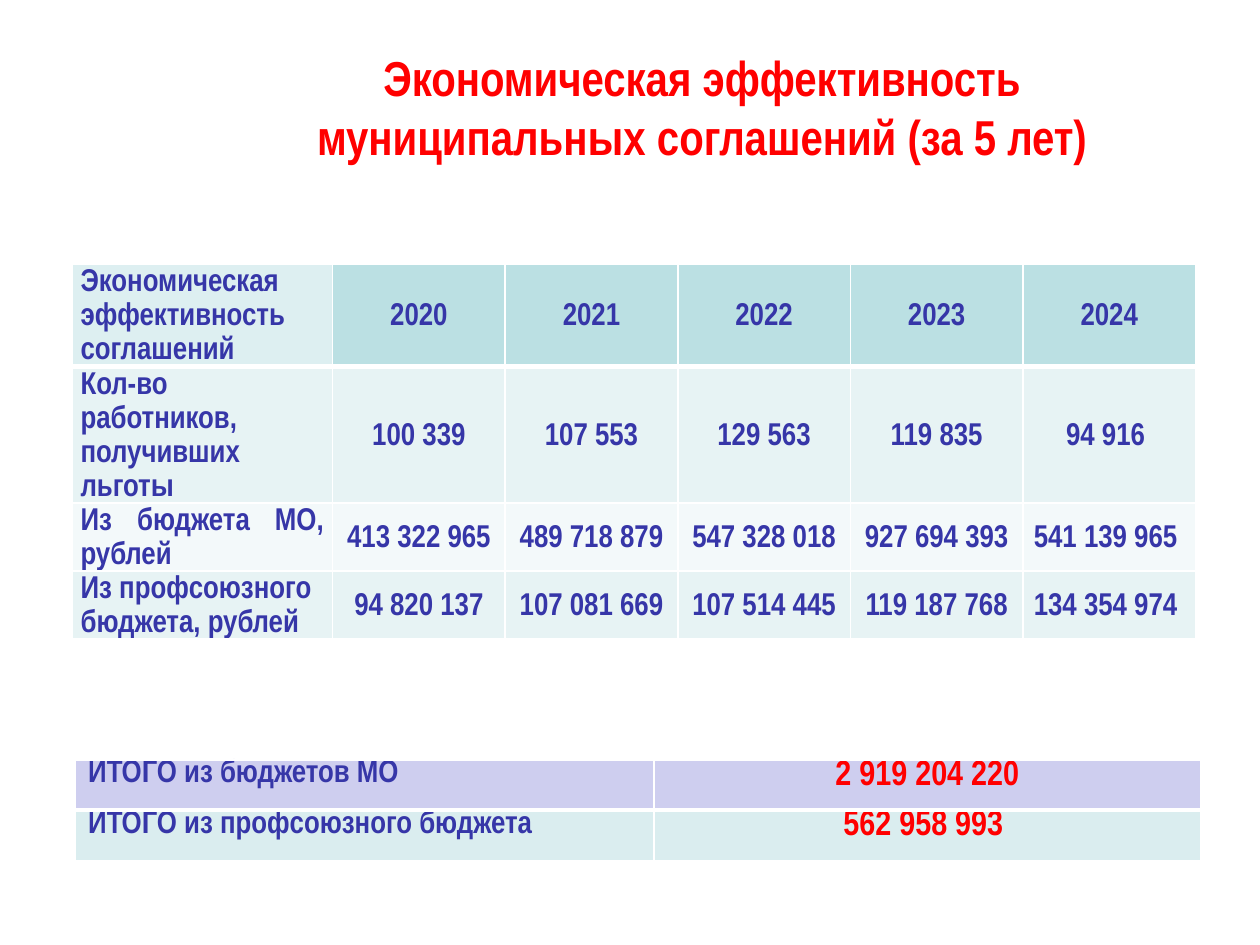
import pptx
import pptx.util
import pptx.dml.color
import pptx.enum.text
from lxml import etree
from pptx.util import Inches, Pt

FONT = "Arial Narrow"
RED, BLUE, WHITE, TEAL = "FF0000", "3636A8", "FFFFFF", "BBE0E3"
ALIGN = pptx.enum.text.PP_ALIGN
ANCHOR = pptx.enum.text.MSO_ANCHOR
NS = "http://schemas.openxmlformats.org/drawingml/2006/main"

YEARS_TABLE = [
    ["Экономическая эффективность соглашений", "2020", "2021", "2022", "2023", "2024"],
    ["Кол-во работников, получивших льготы",
     "100 339", "107 553", "129 563", "119 835", "94 916 "],
    ["Из бюджета МО, рублей",
     "413 322 965", "489 718 879", "547 328 018", "927 694 393", "541 139 965 "],
    ["Из профсоюзного бюджета, рублей",
     "94 820 137", "107 081 669", "107 514 445", "119 187 768", "134 354 974 "],
]
TOTALS = [
    ["ИТОГО из бюджетов МО", "2 919 204 220"],
    ["ИТОГО из профсоюзного бюджета", "562 958 993 "],
]


def rgb(value):
    return pptx.dml.color.RGBColor.from_string(value)


def format_text(p, size, color, align):
    p.alignment = align
    for r in p.runs:
        r.font.name, r.font.size, r.font.bold = FONT, Pt(size), True
        r.font.color.rgb = rgb(color)


def set_borders(cell, bottom):
    """White cell borders; they come before the fill in the cell properties."""
    tcPr = cell._tc.get_or_add_tcPr()
    for i, (side, width) in enumerate([("L", 1), ("R", 1), ("T", 1), ("B", bottom)]):
        ln = etree.Element(f"{{{NS}}}ln{side}", w=str(Pt(width)))
        fill = etree.SubElement(ln, f"{{{NS}}}solidFill")
        etree.SubElement(fill, f"{{{NS}}}srgbClr", val=WHITE)
        tcPr.insert(i, ln)


def format_cell(cell, text, fill, size, color, align, margin, bottom):
    cell.text_frame.text = text
    cell.margin_left = cell.margin_right = Inches(margin)
    cell.margin_top = cell.margin_bottom = 0
    cell.fill.solid()
    cell.fill.fore_color.rgb = rgb(fill)
    set_borders(cell, bottom)
    p = cell.text_frame.paragraphs[0]
    format_text(p, size, color, align)
    return p


def add_grid(s, box, rows, widths, row_height):
    frame = s.shapes.add_table(len(rows), len(widths), *map(Inches, box))
    table = frame.table
    table.horz_banding = False
    for column, width in zip(table.columns, widths):
        column.width = Inches(width)
    for row in table.rows:
        row.height = Inches(row_height)
    frame.height = Inches(box[3])
    return table


def add_title(s, box):
    sp = s.shapes.title
    sp.left, sp.top, sp.width, sp.height = map(Inches, box)
    tf = sp.text_frame
    tf.text = "Экономическая эффективность муниципальных соглашений (за 5 лет)"
    tf.word_wrap = True
    tf.vertical_anchor = ANCHOR.TOP
    tf.margin_top = Inches(0.08)
    format_text(tf.paragraphs[0], 28, RED, ALIGN.CENTER)


def add_years_table(s, box):
    # Rows grow to fit their text
    table = add_grid(s, box, YEARS_TABLE, [2.07] + [1.37] * 5, 0)
    fills = [TEAL, "E7F3F4", "F3F9FA", "E7F3F4"]
    for i, row in enumerate(YEARS_TABLE):
        for j, text in enumerate(row):
            cell = table.cell(i, j)
            align = ALIGN.CENTER if j else ALIGN.JUSTIFY if i == 2 else ALIGN.LEFT
            p = format_cell(cell, text, fills[i], 18, BLUE, align, 0.07, 1 if i else 3)
            cell.vertical_anchor = ANCHOR.MIDDLE
            p.line_spacing = 1.15
            if i and j:
                p.space_after = Pt(10)
    # Half-transparent corner cell
    color = table.cell(0, 0)._tc.tcPr.find(f"{{{NS}}}solidFill/{{{NS}}}srgbClr")
    etree.SubElement(color, f"{{{NS}}}alpha", val="49000")


def add_totals_table(s, box):
    table = add_grid(s, box, TOTALS, [4.59, 4.34], 0.4)
    for i, (label, total) in enumerate(TOTALS):
        fill, bottom = [("CECEEF", 3), ("DAEDEF", 1)][i]
        format_cell(table.cell(i, 0), label, fill, 18, BLUE, ALIGN.LEFT, 0.1, bottom)
        format_cell(table.cell(i, 1), total, fill, 20, RED, ALIGN.CENTER, 0.1, bottom)


def main():
    prs = pptx.Presentation()
    prs.slide_width, prs.slide_height = Inches(10), Inches(7.5)
    s = prs.slides.add_slide(prs.slide_layouts[5])
    add_title(s, (1.64, 0.3, 7.86, 1.25))
    add_years_table(s, (0.57, 2.1, 8.94, 3.67))
    add_totals_table(s, (0.6, 6.03, 8.93, 0.87))
    prs.save("out.pptx")


if __name__ == "__main__":
    main()
